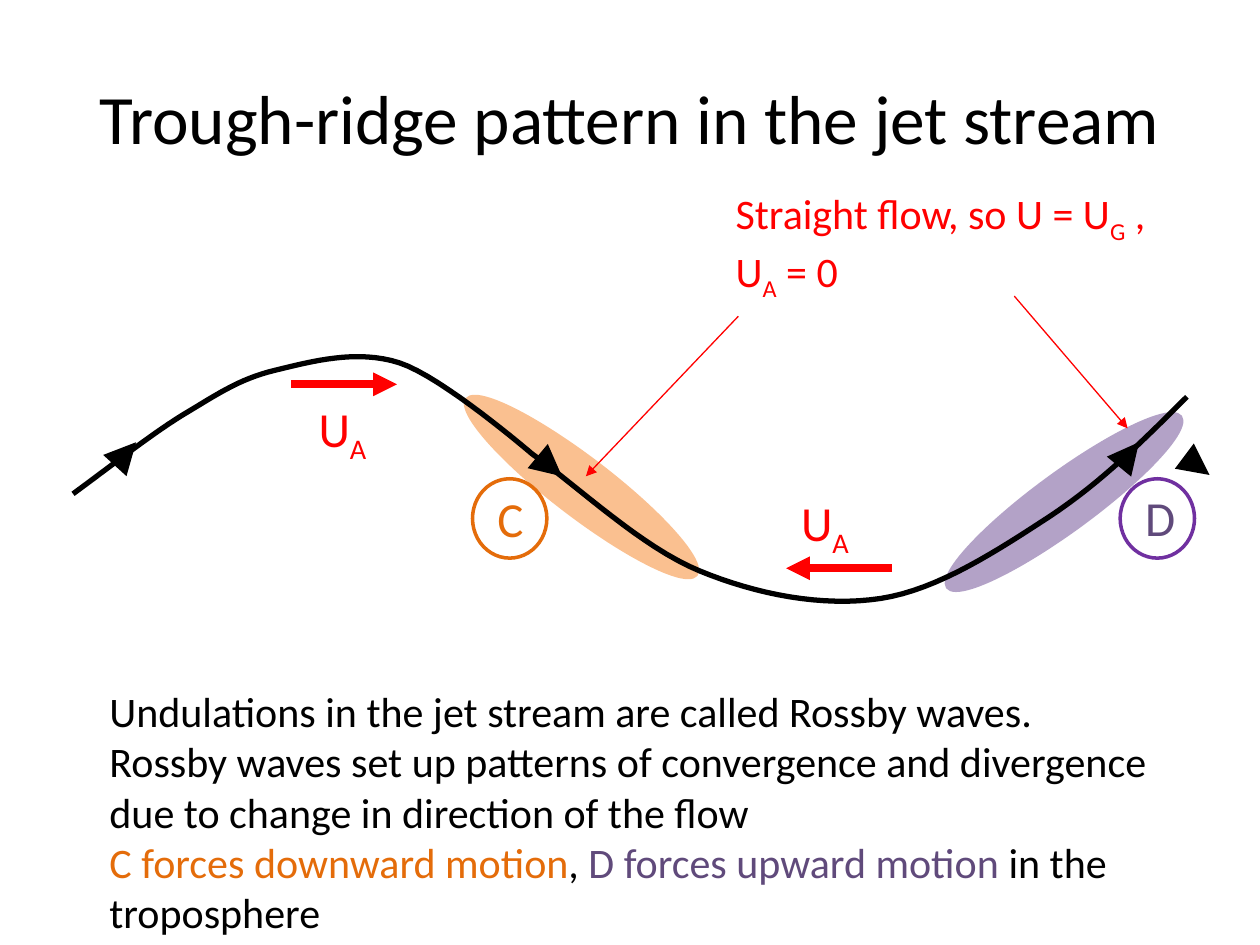
"""Build a slide on the trough-ridge pattern in the jet stream."""
import pptx
import pptx.dml.color
import pptx.enum.shapes
import pptx.enum.text
import pptx.oxml
import pptx.oxml.ns
import pptx.util

Inches = pptx.util.Inches
Pt = pptx.util.Pt
RGBColor = pptx.dml.color.RGBColor

BLACK = RGBColor(0x00, 0x00, 0x00)
RED = RGBColor(0xFF, 0x00, 0x00)
ORANGE = RGBColor(0xE4, 0x6C, 0x0A)
PEACH = RGBColor(0xFA, 0xC0, 0x90)
LILAC = RGBColor(0xB3, 0xA2, 0xC7)
PURPLE = RGBColor(0x70, 0x30, 0xA0)
PLUM = RGBColor(0x60, 0x4A, 0x7B)


def write(frame, size, paras):
    style = {"name": "Calibri", "size": Pt(size)}
    frame.word_wrap = True
    for num, parts in enumerate(paras):
        para = frame.add_paragraph() if num else frame.paragraphs[0]
        for text, color, sub in parts:
            run = para.add_run()
            run.text = text
            for key, value in style.items():
                setattr(run.font, key, value)
            run.font.color.rgb = color
            if sub:
                run._r.get_or_add_rPr().set("baseline", "-25000")


def arrow(start, end, color, width):
    line = slide.shapes.add_connector(
        pptx.enum.shapes.MSO_CONNECTOR.STRAIGHT, *map(Inches, start + end))
    line.line.color.rgb = color
    line.line.width = Pt(width)
    tip = pptx.oxml.parse_xml(
        f'<a:tailEnd {pptx.oxml.ns.nsdecls("a")} type="triangle"/>')
    line.line._get_or_add_ln().append(tip)
    line._element.spPr.append(
        pptx.oxml.parse_xml(f'<a:effectLst {pptx.oxml.ns.nsdecls("a")}/>'))


deck = pptx.Presentation()
deck.slide_width, deck.slide_height = Inches(10), Inches(7.5)
slide = deck.slides.add_slide(deck.slide_layouts[5])

title = slide.shapes.title
spot = {"left": 0.5, "top": 0.3, "width": 9, "height": 1.25}
for key, value in spot.items():
    setattr(title, key, Inches(value))
title.text_frame.vertical_anchor = pptx.enum.text.MSO_ANCHOR.MIDDLE
write(title.text_frame, 39.6,
      [[("Trough-ridge pattern in the jet stream", BLACK, False)]])
title.text_frame.paragraphs[0].alignment = pptx.enum.text.PP_ALIGN.CENTER

ovals = [
    ((7.3, 3.76, 2.29, 0.45), 323.8, LILAC, LILAC),
    ((3.47, 3.64, 2.29, 0.45), 37.4, PEACH, PEACH),
    ((3.75, 3.8, 0.59, 0.63), 0, None, ORANGE),
    ((8.89, 3.8, 0.59, 0.63), 0, None, PURPLE),
]
for box, turn, fill, edge in ovals:
    oval = slide.shapes.add_shape(
        pptx.enum.shapes.MSO_SHAPE.OVAL, *map(Inches, box))
    oval.rotation = turn
    oval.shadow.inherit = False
    if fill:
        oval.fill.solid()
        oval.fill.fore_color.rgb = fill
    else:
        oval.fill.background()
    oval.line.color.rgb = edge
    oval.line.width = Pt(2)

start = (0.58, 3.92)
curves = [
    ((0.88, 3.7), (1.17, 3.47), (1.44, 3.3)),
    ((1.71, 3.14), (1.89, 3.01), (2.18, 2.94)),
    ((2.47, 2.87), (2.83, 2.77), (3.17, 2.88)),
    ((3.51, 2.99), (4.22, 3.6), (4.22, 3.6)),
    ((4.61, 3.88), (5.09, 4.34), (5.55, 4.53)),
    ((6.01, 4.72), (6.53, 4.82), (6.99, 4.75)),
    ((7.45, 4.68), (7.93, 4.36), (8.33, 4.1)),
    ((8.74, 3.83), (9.08, 3.49), (9.42, 3.15)),
]
steps = 16
points = []
last = start
for one, two, end in curves:
    for step in range(1, steps + 1):
        t = step / steps
        u = 1 - t
        points.append(tuple(
            Inches(u**3 * a + 3 * u * u * t * b + 3 * u * t * t * c + t**3 * d)
            for a, b, c, d in zip(last, one, two, end)))
    last = end
path = slide.shapes.build_freeform(*map(Inches, start))
path.add_line_segments(points, close=False)
jet = path.convert_to_shape()
jet.shadow.inherit = False
jet.fill.background()
jet.line.color.rgb = BLACK
jet.line.width = Pt(3)

arrows = [
    ((0.98, 3.62), (1.08, 3.51), BLACK, 6),
    ((4.34, 3.68), (4.46, 3.78), BLACK, 6),
    ((8.95, 3.62), (9.04, 3.51), BLACK, 6),
    ((9.48, 3.68), (9.6, 3.77), BLACK, 6),
    ((2.31, 3.05), (3.15, 3.05), RED, 4.5),
    ((7.08, 4.51), (6.24, 4.51), RED, 4.5),
    ((5.86, 2.51), (4.65, 3.78), RED, 0.75),
    ((8.05, 2.35), (8.95, 3.4), RED, 0.75),
]
for item in arrows:
    arrow(*item)

wind = [[("U", RED, False), ("A", RED, True)]]
flow = [[("Straight flow, so U = U", RED, False), ("G", RED, True),
         (" , U", RED, False), ("A", RED, True), (" = 0", RED, False)]]
notes = [
    [("Undulations in the jet stream are called Rossby waves.", BLACK, False)],
    [("Rossby waves set up patterns of convergence and divergence "
      "due to change in direction of the flow", BLACK, False)],
    [("C forces downward motion", ORANGE, False), (", ", BLACK, False),
     ("D forces upward motion ", PLUM, False),
     ("in the troposphere", BLACK, False)],
]
texts = [
    ((2.43, 3.11, 0.93, 0.57), 28, wind),
    ((6.26, 3.86, 0.93, 0.57), 28, wind),
    ((5.74, 1.44, 3.49, 0.91), 24, flow),
    ((3.85, 3.83, 0.67, 0.57), 28, [[("C", ORANGE, False)]]),
    ((8.99, 3.82, 0.67, 0.57), 28, [[("D", PLUM, False)]]),
    ((0.77, 5.39, 8.88, 2.12), 24, notes),
]
for box, size, paras in texts:
    label = slide.shapes.add_textbox(*map(Inches, box))
    write(label.text_frame, size, paras)

deck.save("out.pptx")
